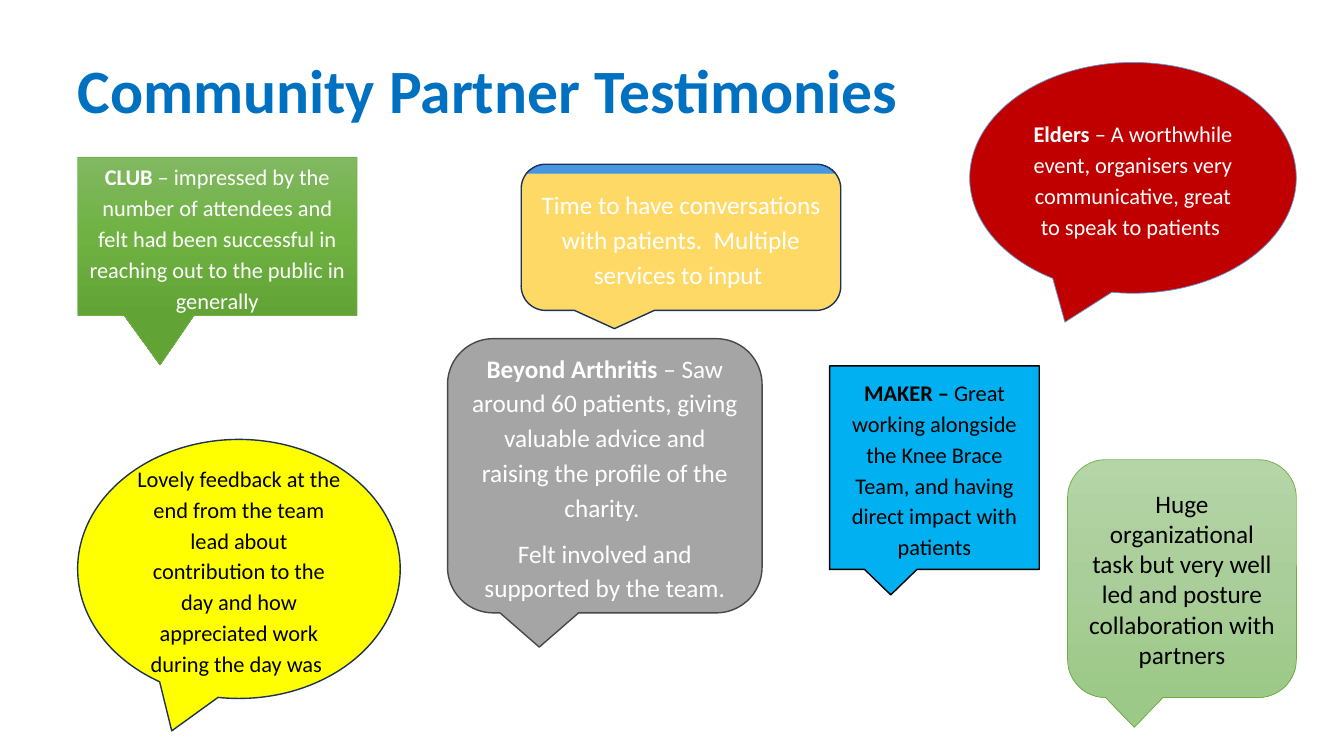
"""Build a slide of partner testimonies in coloured speech callouts."""
import pptx
import pptx.util
import pptx.dml.color
import pptx.enum.shapes
import pptx.enum.text
import pptx.oxml
import pptx.oxml.ns

SLIDE_W, SLIDE_H = 13.33, 7.5
FONT = "Calibri"
TITLE = "Community Partner Testimonies"
TITLE_BOX = (5.03, 4, 90, 16.67)
KINDS = pptx.enum.shapes.MSO_SHAPE
RECT = KINDS.RECTANGULAR_CALLOUT
ROUND = KINDS.ROUNDED_RECTANGULAR_CALLOUT
OVAL = KINDS.OVAL_CALLOUT
DOWN, UP = 270, 90

# Boxes are left, top, width and height in percent of the slide.
CALLOUTS = [
    dict(kind=RECT, box=(5.78, 20.8, 20.78, 20.93), tail=(-0.205, 0.813),
         fill=[(0, "81B861"), (50, "6FB242"), (100, "62A336")], angle=DOWN,
         line=("70AD47", 0.5), size=16, color="FFFFFF",
         text=[("CLUB", " – impressed by the number of attendees and felt had been "
                "successful in reaching out to the public in generally")]),
    dict(kind=OVAL, box=(72.15, 8.27, 24.3, 30.53), fill="C00000",
         line=("5B9BD5", 0.5), size=16, color="FFFFFF",
         text=[("Elders ", "– A worthwhile event, organisers very communicative, "
                "great to speak to patients ")]),
    dict(kind=ROUND, box=(33.3, 44.8, 23.4, 36.27), fill="A5A5A5",
         line=("484848", 1), size=18, color="FFFFFF",
         text=[("Beyond Arthritis ", "– Saw around 60 patients, giving valuable advice "
                "and raising the profile of the charity. "),
               ("", "Felt involved and supported by the team.")]),
    dict(kind=RECT, box=(61.73, 48.4, 15.6, 26.93), fill="00B0F0",
         line=("000000", 1), size=16, color="000000",
         text=[("MAKER – ", "Great working alongside the Knee Brace Team, "
                "and having direct impact with patients")]),
    dict(kind=OVAL, box=(5.78, 58.13, 24, 34.27), fill="FFFF00",
         line=("1E3256", 1), size=16, color="000000",
         text=[("", "Lovely feedback at the end from the team lead about contribution "
                "to the day and how appreciated work during the day was ")]),
    dict(kind=ROUND, box=(38.78, 21.73, 23.78, 19.33),
         fill=[(0, "FFD966"), (93, "FFD966"), (94, "4697E0"), (100, "4498E4")], angle=UP,
         line=("1E3256", 1), size=18, color="FFFFFF",
         text=[("", "Time to have conversations with patients.  "
                "Multiple services to input ")]),
    dict(kind=ROUND, box=(79.43, 60.8, 17.03, 31.47),
         fill=[(0, "B5D5A7"), (50, "AACE9A"), (100, "9CC987")], angle=DOWN,
         line=("70AD47", 0.5), size=18, color="000000", spacing=1, after=0,
         text=[("", "Huge organizational task but very well led and posture "
                "collaboration with partners")]),
]


def rgb(value):
    """Turn a hex string into a colour."""
    return pptx.dml.color.RGBColor.from_string(value)


def place(box):
    """Turn percentages of the slide into lengths."""
    return [pptx.util.Inches(share * side / 100)
            for share, side in zip(box, (SLIDE_W, SLIDE_H) * 2)]


def style(r, size, color, bold):
    """Format one run."""
    r.font.name = FONT
    r.font.size = pptx.util.Pt(size)
    r.font.bold = bold
    r.font.color.rgb = rgb(color)


def paint(sp, fill, angle):
    """Fill a shape with a colour or with gradient stops."""
    if isinstance(fill, str):
        sp.fill.solid()
        sp.fill.fore_color.rgb = rgb(fill)
        return
    sp.fill.gradient()
    sp.fill.gradient_angle = angle
    stops = next(sp._element.spPr.iter(pptx.oxml.ns.qn("a:gsLst")))
    for stop in list(stops):
        stops.remove(stop)
    for percent, color in fill:
        stops.append(pptx.oxml.parse_xml(
            f'<a:gs {pptx.oxml.ns.nsdecls("a")} pos="{percent * 1000}">'
            f'<a:srgbClr val="{color}"/></a:gs>'))


def add_callout(s, kind, box, fill, line, size, color, text,
                angle=DOWN, tail=(), spacing=1.15, after=8):
    """Draw one callout with its testimony."""
    sp = s.shapes.add_shape(kind, *place(box))
    sp.shadow.inherit = False
    for i, value in enumerate(tail):
        sp.adjustments[i] = value
    paint(sp, fill, angle)
    sp.line.color.rgb = rgb(line[0])
    sp.line.width = pptx.util.Pt(line[1])
    tf = sp.text_frame
    tf.word_wrap = True
    tf.vertical_anchor = pptx.enum.text.MSO_ANCHOR.MIDDLE
    for i, parts in enumerate(text):
        p = tf.add_paragraph() if i else tf.paragraphs[0]
        p.alignment = pptx.enum.text.PP_ALIGN.CENTER
        p.line_spacing = spacing
        p.space_after = pptx.util.Pt(after)
        for words, bold in zip(parts, (True, False)):
            if words:
                r = p.add_run()
                r.text = words
                style(r, size, color, bold)


def add_title(s):
    """Move and format the title placeholder."""
    title = s.shapes.title
    title.left, title.top, title.width, title.height = place(TITLE_BOX)
    tf = title.text_frame
    tf.text = TITLE
    tf.word_wrap = True
    tf.auto_size = pptx.enum.text.MSO_AUTO_SIZE.NONE
    tf.vertical_anchor = pptx.enum.text.MSO_ANCHOR.MIDDLE
    p = tf.paragraphs[0]
    p.alignment = pptx.enum.text.PP_ALIGN.LEFT
    p.line_spacing = 0.9
    style(p.runs[0], 44, "0070C0", True)


def main():
    """Build and save the slide."""
    prs = pptx.Presentation()
    prs.slide_width = pptx.util.Inches(SLIDE_W)
    prs.slide_height = pptx.util.Inches(SLIDE_H)
    s = prs.slides.add_slide(prs.slide_layouts[5])
    add_title(s)
    for callout in CALLOUTS:
        add_callout(s, **callout)
    prs.save("out.pptx")


if __name__ == "__main__":
    main()
